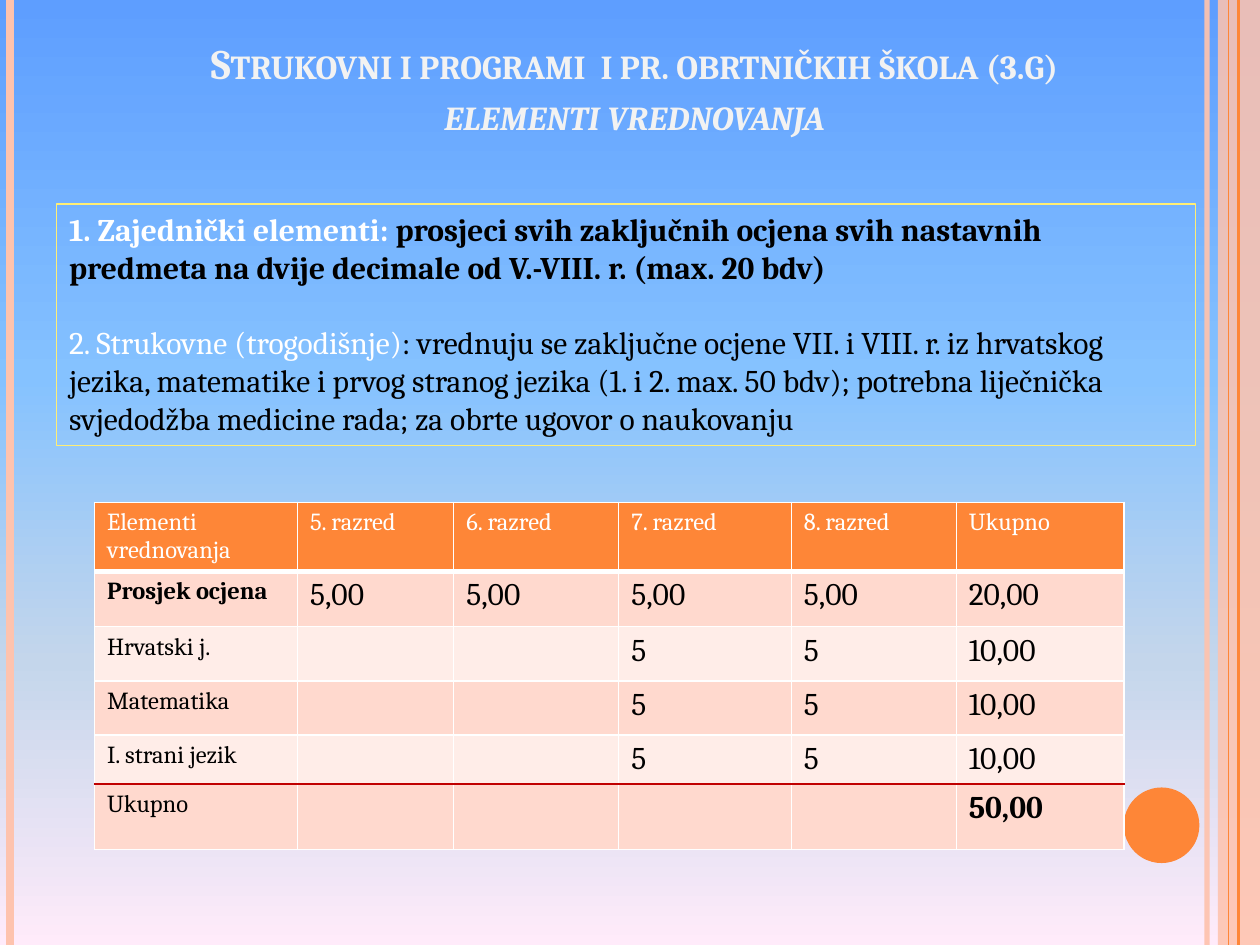
import dataclasses

import pptx
import pptx.dml.color
import pptx.enum.shapes
import pptx.enum.text
import pptx.oxml.ns
import pptx.util
from lxml import etree

Pt = pptx.util.Pt
qn = pptx.oxml.ns.qn
color = pptx.dml.color.RGBColor.from_string


@dataclasses.dataclass(frozen=True)
class Theme:
    font: str = "Cambria"
    white: str = "FFFFFF"
    black: str = "000000"
    title: str = "F2F2F2"
    accent: str = "FE8637"
    stripe: str = "FEC3AE"
    frame: str = "FFEE74"
    rule: str = "C00000"
    bands: tuple = ("FFD9CE", "FFEDE8")
    background: tuple = ((0, "5E9EFF"), (40, "85C2FF"), (70, "C4D6EB"), (100, "FFEBFA"))
    title_size: int = 24
    body_size: int = 18
    label_size: int = 14


theme = Theme()


def add_run(paragraph, text, size, fill, bold=False, italic=False):
    run = paragraph.add_run()
    run.text = text
    run.font.name = theme.font
    run.font.size = Pt(size)
    run.font.bold = bold
    run.font.italic = italic
    run.font.color.rgb = color(fill)
    return run


def add_solid_fill(parent, fill, opacity=100):
    solid = etree.SubElement(parent, qn("a:solidFill"))
    value = etree.SubElement(solid, qn("a:srgbClr"), val=fill)
    if opacity < 100:
        etree.SubElement(value, qn("a:alpha"), val=str(opacity * 1000))


presentation = pptx.Presentation()
presentation.slide_width = Pt(720)
presentation.slide_height = Pt(540)
slide = presentation.slides.add_slide(presentation.slide_layouts[5])
shapes = slide.shapes

background = slide.background.fill
background.gradient()
background.gradient_angle = 270
stops = background._fill._gradFill.find(qn("a:gsLst"))
for stop in list(stops):
    stops.remove(stop)
for position, fill in theme.background:
    stop = etree.SubElement(stops, qn("a:gs"), pos=str(position * 1000))
    etree.SubElement(stop, qn("a:srgbClr"), val=fill)

band = shapes.add_shape(pptx.enum.shapes.MSO_SHAPE.RECTANGLE, Pt(696), 0, Pt(24), Pt(540))
band.shadow.inherit = False
band.line.fill.background()
band.fill.solid()
band.fill.fore_color.rgb = color(theme.stripe)
band_color = band._element.spPr.find(qn("a:solidFill"))[0]
etree.SubElement(band_color, qn("a:alpha"), val="87000")

for x, width, fill, opacity in (
    (689.8, 3, theme.stripe, 93),
    (5.8, 4.5, theme.stripe, 100),
    (707.8, 1.5, theme.accent, 100),
    (702, 0.75, theme.accent, 100),
):
    stripe = shapes.add_connector(
        pptx.enum.shapes.MSO_CONNECTOR.STRAIGHT, Pt(x), 0, Pt(x), Pt(540)
    )
    stripe.line.width = Pt(width)
    add_solid_fill(stripe.line._get_or_add_ln(), fill, opacity)
    etree.SubElement(stripe._element.spPr, qn("a:effectLst"))

circle = shapes.add_shape(
    pptx.enum.shapes.MSO_SHAPE.OVAL, Pt(642.2), Pt(450), Pt(43.2), Pt(43.2)
)
circle.shadow.inherit = False
circle.line.fill.background()
circle.fill.solid()
circle.fill.fore_color.rgb = color(theme.accent)

title = shapes.title
title.left, title.top, title.width, title.height = Pt(36), Pt(21.6), Pt(653), Pt(61.2)
title_frame = title.text_frame
title_frame.word_wrap = True
title_frame.auto_size = pptx.enum.text.MSO_AUTO_SIZE.NONE
title_frame.vertical_anchor = pptx.enum.text.MSO_ANCHOR.BOTTOM
paragraph = title_frame.paragraphs[0]
paragraph.alignment = pptx.enum.text.PP_ALIGN.CENTER
first_line = add_run(
    paragraph, "Strukovni i programi  i pr. obrtničkih škola (3.g)",
    theme.title_size, theme.title, bold=True,
)
paragraph.add_line_break()
second_line = add_run(
    paragraph, "elementi vrednovanja", theme.title_size, theme.title, bold=True, italic=True
)
for run in (first_line, second_line):
    run.font._element.set("cap", "small")

columns = (116, 89.3, 94.3, 98.6, 94.3, 95.8)
rows = (39, 31.7, 31, 31, 28, 37.4)
values = (
    ("Elementi vrednovanja", "5. razred", "6. razred", "7. razred", "8. razred", "Ukupno"),
    ("Prosjek ocjena", "5,00", "5,00", "5,00", "5,00", "20,00"),
    ("Hrvatski j.", "", "", "5", "5", "10,00"),
    ("Matematika", "", "", "5", "5", "10,00"),
    ("I. strani jezik", "", "", "5", "5", "10,00"),
    ("Ukupno", "", "", "", "", "50,00"),
)
table = shapes.add_table(
    len(rows), len(columns), Pt(54), Pt(287), Pt(sum(columns)), Pt(sum(rows))
).table
table.horz_banding = False
for index, width in enumerate(columns):
    table.columns[index].width = Pt(width)
for row, height in enumerate(rows):
    table.rows[row].height = Pt(height)
    for column, text in enumerate(values[row]):
        cell = table.cell(row, column)
        properties = cell._tc.get_or_add_tcPr()
        borders = {
            "L": (theme.white, 1),
            "R": (theme.white, 1),
            "T": (theme.rule if row == 5 else theme.white, 3 if row == 1 else 1),
            "B": (theme.rule if row == 4 else theme.white, 3 if row == 0 else 1),
        }
        for side, (fill, width) in borders.items():
            border = etree.SubElement(properties, qn("a:ln" + side), w=str(Pt(width)))
            add_solid_fill(border, fill)
        cell.fill.solid()
        cell.fill.fore_color.rgb = color(theme.bands[(row - 1) % 2] if row else theme.accent)
        paragraph = cell.text_frame.paragraphs[0]
        if text:
            add_run(
                paragraph,
                text,
                theme.body_size if row and column else theme.label_size,
                theme.black if row else theme.white,
                bold=(row, column) in ((1, 0), (5, 5)),
            )
        else:
            etree.SubElement(paragraph._p, qn("a:endParaRPr"), sz=str(theme.label_size * 100))

box = shapes.add_shape(
    pptx.enum.shapes.MSO_SHAPE.RECTANGLE, Pt(32.4), Pt(116.6), Pt(650.9), Pt(138.2)
)
box.shadow.inherit = False
box.fill.background()
box.line.color.rgb = color(theme.frame)
box.line.width = Pt(0.75)
frame = box.text_frame
frame.word_wrap = True
frame.vertical_anchor = pptx.enum.text.MSO_ANCHOR.TOP
criteria = (
    (
        "1. Zajednički elementi: ",
        "prosjeci svih zaključnih ocjena svih nastavnih predmeta na dvije decimale "
        "od V.-VIII. r. (max. 20 bdv)",
        True,
    ),
    (
        "2. Strukovne (trogodišnje)",
        ": vrednuju se zaključne ocjene VII. i VIII. r. iz hrvatskog jezika, matematike "
        "i prvog stranog jezika (1. i 2. max. 50 bdv); potrebna liječnička svjedodžba "
        "medicine rada; za obrte ugovor o naukovanju",
        False,
    ),
)
for index, (heading, description, bold) in enumerate(criteria):
    paragraph = frame.add_paragraph() if index else frame.paragraphs[0]
    paragraph.alignment = pptx.enum.text.PP_ALIGN.LEFT
    paragraph.space_before = Pt(21.5 * index)
    add_run(paragraph, heading, theme.body_size, theme.white, bold)
    add_run(paragraph, description, theme.body_size, theme.black, bold)

presentation.save("out.pptx")
